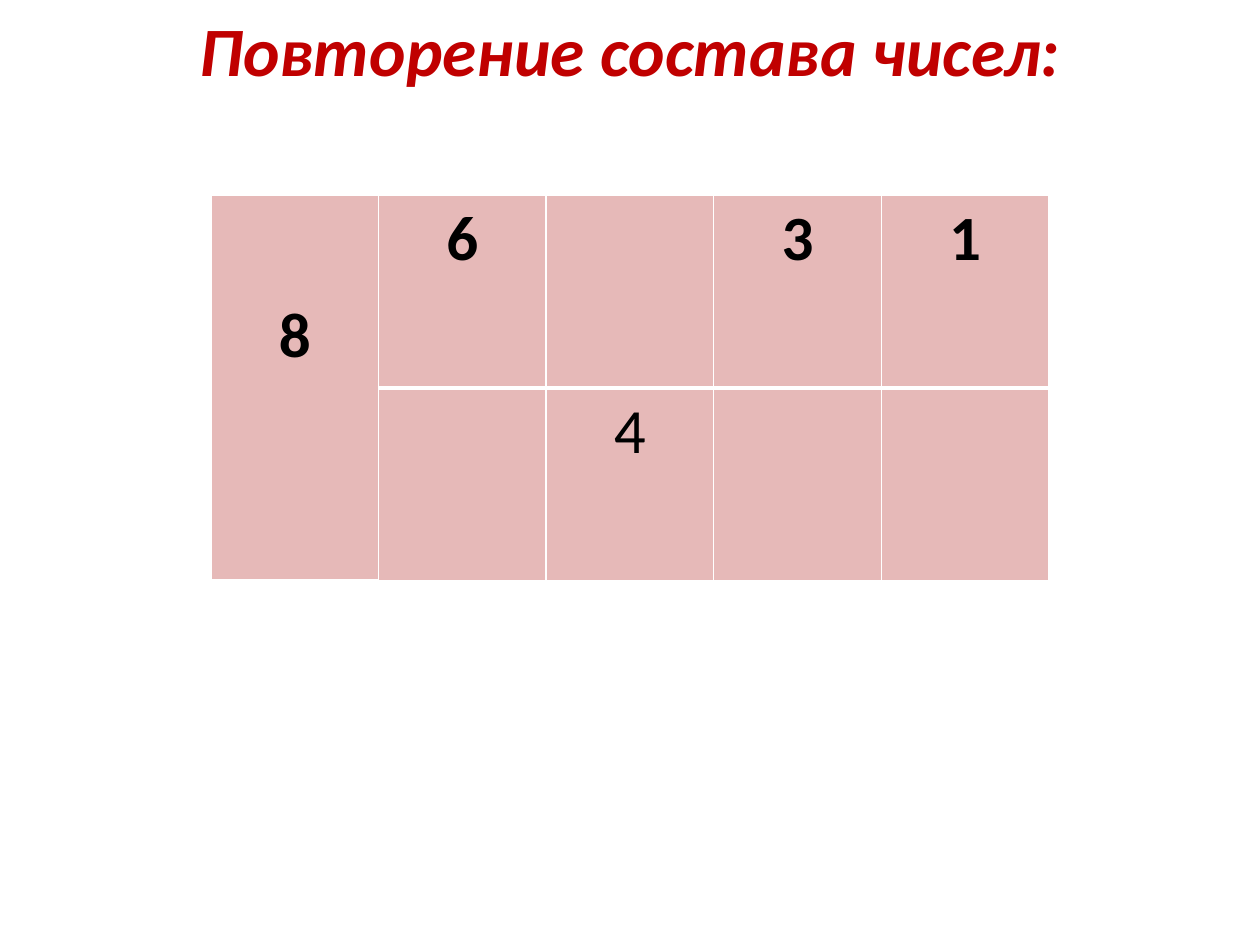
from lxml import etree
from pptx import Presentation
from pptx.dml.color import RGBColor
from pptx.enum import text
from pptx.oxml.ns import qn
from pptx import util as u

# Content: (number, bold)
TITLE = "Повторение состава чисел:"
ROWS = [
    [("8", True), ("6", True), None, ("3", True), ("1", True)],
    [None, None, ("4", False), None, None],
]
FONT = "Calibri"
RED = RGBColor(0xC0, 0x00, 0x00)
PINK = RGBColor(0xE6, 0xB9, 0xB8)
BLACK = RGBColor(0, 0, 0)
WHITE = RGBColor(255, 255, 255)
WIDE, HIGH = 10, 7.5
COL, ROW = 1.33, 1.53
TOP = 1.55
DROP = 0.77  # lowers the whole number in its tall cell


def write(par, words, size, color, bold, italic=False):
    par.alignment = text.PP_ALIGN.CENTER
    run = par.add_run()
    run.text = words
    font = run.font
    font.name, font.size = FONT, u.Pt(size)
    font.bold, font.italic = bold, italic
    font.color.rgb = color


def edge(cell, low):
    """Draw white borders; low is the width of the bottom one."""
    props = cell._tc.get_or_add_tcPr()
    for i, (side, wide) in enumerate([("L", 1), ("R", 1), ("T", 1), ("B", low)]):
        line = etree.Element(qn("a:ln" + side), w=str(u.Pt(wide)))
        fill = etree.SubElement(line, qn("a:solidFill"))
        etree.SubElement(fill, qn("a:srgbClr"), val=str(WHITE))
        props.insert(i, line)


deck = Presentation()
deck.slide_width, deck.slide_height = u.Inches(WIDE), u.Inches(HIGH)
slide = deck.slides.add_slide(deck.slide_layouts[6])

# Title
box = slide.shapes.add_textbox(
    u.Inches(0.5), u.Inches(0.03), u.Inches(WIDE - 1), u.Inches(0.72))
frame = box.text_frame
frame.word_wrap = True
frame.vertical_anchor = text.MSO_ANCHOR.MIDDLE
write(frame.paragraphs[0], TITLE, 39.6, RED, True, True)

# Number table, centred across the slide
count = len(ROWS[0])
width = count * COL
grid = slide.shapes.add_table(
    len(ROWS), count, u.Inches((WIDE - width) / 2), u.Inches(TOP),
    u.Inches(width), u.Inches(len(ROWS) * ROW)).table
for col in grid.columns:
    col.width = u.Inches(COL)
for row in grid.rows:
    row.height = u.Inches(ROW)

for r, row in enumerate(ROWS):
    for c, item in enumerate(row):
        cell = grid.cell(r, c)
        cell.fill.solid()
        cell.fill.fore_color.rgb = PINK
        edge(cell, 3 if r == 0 else 1)
        cell.margin_left = cell.margin_right = u.Inches(0.07)
        cell.margin_top = cell.margin_bottom = 0
        if item:
            par = cell.text_frame.paragraphs[0]
            par.line_spacing = 1.07
            write(par, item[0], 36, BLACK, item[1])

# Tall cell for the whole number
whole = grid.cell(0, 0)
whole.merge(grid.cell(len(ROWS) - 1, 0))
whole.margin_top = u.Inches(DROP)

deck.save("out.pptx")
